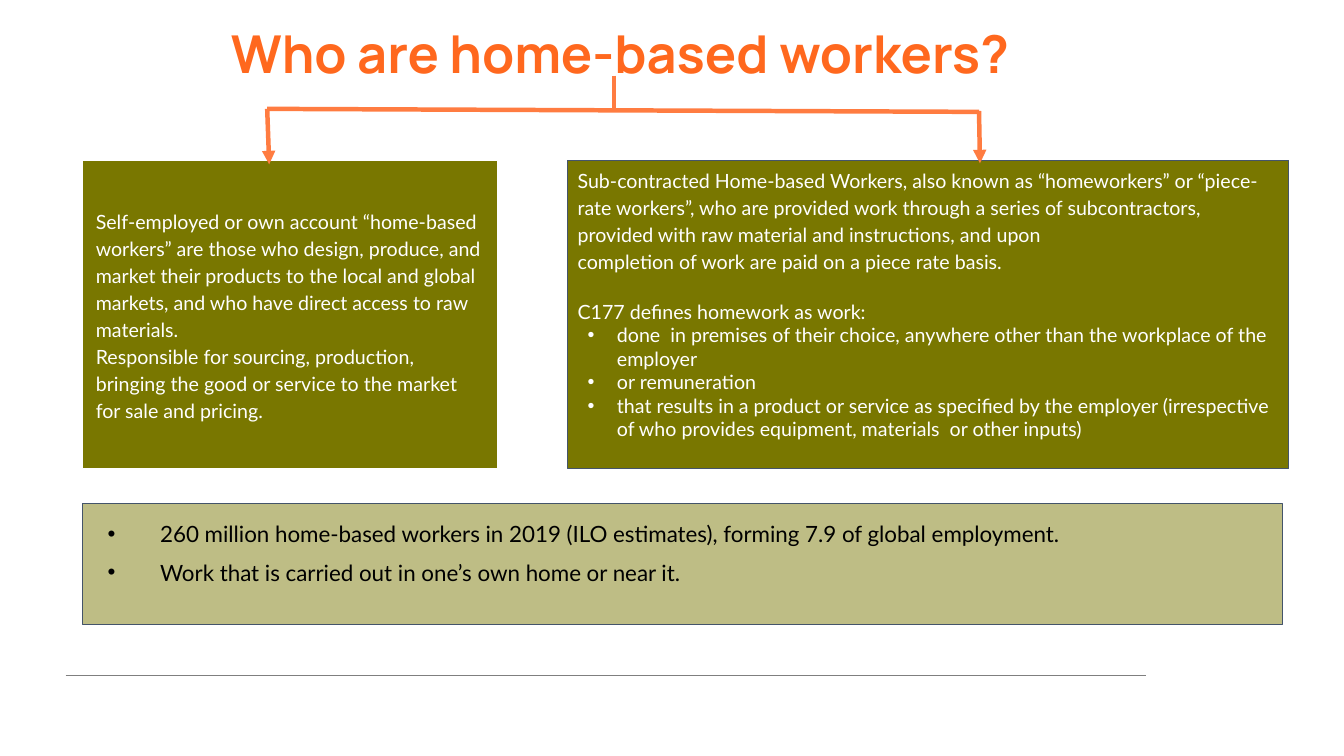
from lxml.etree import SubElement
from pptx import Presentation
from pptx.dml.color import RGBColor
from pptx.enum.shapes import MSO_CONNECTOR as Connector, MSO_SHAPE as Shape
from pptx.enum.text import MSO_ANCHOR as Anchor, PP_ALIGN as Align
from pptx.oxml.ns import qn
from pptx.util import Inches, Pt

WHITE = RGBColor(0xFF, 0xFF, 0xFF)
BLACK = RGBColor(0, 0, 0)
OLIVE = RGBColor(0x79, 0x77, 0x00)
SLATE = RGBColor(0x44, 0x54, 0x6A)
TITLE_ORANGE = RGBColor(0xFF, 0x68, 0x1E)
ARROW_ORANGE = RGBColor(0xFF, 0x7C, 0x41)
GREY = RGBColor(0x7F, 0x7F, 0x7F)

WIDTH, HEIGHT = 13.33, 7.5
LEFT, RIGHT_COLUMN = 0.82, 5.63
CARD_TOP, CARD_HEIGHT = 1.59, 3.06
STEM_X, LEFT_ARROW_X, RIGHT_ARROW_X = 6.09, 2.65, 9.71
STEM_TOP, BAR_Y = 0.75, 1.08

TITLE = "Who are home-based workers?"
SELF_EMPLOYED = [
    "Self-employed or own account “home-based workers” are those who design, produce, and market "
    "their products to the local and global markets, and who have direct access to raw materials.",
    "Responsible for sourcing, production, bringing the good or service to the market for sale and pricing.",
]
SUBCONTRACTED = [
    "Sub-contracted Home-based Workers, also known as “homeworkers” or “piece-rate workers”, who are "
    "provided work through a series of subcontractors, provided with raw material and instructions, and upon",
    "completion of work are paid on a piece rate basis.",
]
DEFINITION = "C177 defines homework as work:"
CRITERIA = [
    "done  in premises of their choice, anywhere other than the workplace of the employer",
    "or remuneration",
    "that results in a product or service as specified by the employer "
    "(irrespective of who provides equipment, materials  or other inputs)",
]
FACTS = [
    "260 million home-based workers in 2019 (ILO estimates), forming 7.9 of global employment.",
    "Work that is carried out in one’s own home or near it.",
]

PROSE = {"spacing": 1.15}
CRITERION = {"indent": (0.39, -0.29)}
FACT = {"indent": (0.67, -0.52), "size": 16, "color": BLACK}
SUBCONTRACTED_LINES = (
    [(text, PROSE) for text in SUBCONTRACTED]
    + [(DEFINITION, {"before": 19})]
    + [(text, CRITERION) for text in CRITERIA]
)
FACT_LINES = [(FACTS[0], FACT), (FACTS[1], {**FACT, "before": 8.5})]

CARDS = [
    (LEFT, CARD_TOP, 4.11, CARD_HEIGHT, WHITE, 100, 0.13, 0.13, [(text, PROSE) for text in SELF_EMPLOYED]),
    (RIGHT_COLUMN, CARD_TOP, 7.15, CARD_HEIGHT, SLATE, 100, 0.1, 0.33, SUBCONTRACTED_LINES),
    (LEFT, 5, 11.9, 1.2, SLATE, 48, 0.1, 0.33, FACT_LINES),
]
LINES = [
    (0.65, 6.7, 11.37, 6.7, GREY, 0.75, False),
    (LEFT_ARROW_X, BAR_Y, RIGHT_ARROW_X, 1.11, ARROW_ORANGE, 3.2, False),
    (LEFT_ARROW_X, BAR_Y, 2.67, 1.63, ARROW_ORANGE, 3.2, True),
    (RIGHT_ARROW_X, 1.1, 9.72, 1.62, ARROW_ORANGE, 3.2, True),
    (STEM_X, STEM_TOP, STEM_X, BAR_Y, ARROW_ORANGE, 3.2, False),
]


def set_insets(frame, left, top, right, bottom):
    frame.margin_left, frame.margin_top = Inches(left), Inches(top)
    frame.margin_right, frame.margin_bottom = Inches(right), Inches(bottom)
    frame.word_wrap = True
    frame.vertical_anchor = Anchor.MIDDLE


def add_bullet(para, margin, indent, color):
    properties = para._p.get_or_add_pPr()
    properties.set("marL", str(Inches(margin)))
    properties.set("indent", str(Inches(indent)))
    tint = SubElement(properties, qn("a:buClr"))
    SubElement(tint, qn("a:srgbClr"), val=str(color))
    SubElement(properties, qn("a:buFont"), typeface="Arial")
    SubElement(properties, qn("a:buChar"), char="•")


def write(para, text, indent=None, spacing=1.0, before=0, size=14, color=WHITE,
          name="Lato", bold=False):
    if indent:
        add_bullet(para, *indent, color)
    para.text = text
    para.alignment = Align.LEFT
    para.line_spacing = spacing
    para.space_before = Pt(before)
    para.font.size, para.font.name, para.font.bold = Pt(size), name, bold
    para.font.color.rgb = color


def add_card(page, left, top, width, height, border, opacity, inset, bottom, lines):
    box = page.shapes.add_shape(Shape.RECTANGLE, *map(Inches, (left, top, width, height)))
    box.shadow.inherit = False
    box.fill.solid()
    box.fill.fore_color.rgb = OLIVE
    if opacity < 100:
        tint = box._element.spPr.find(qn("a:solidFill"))[0]
        SubElement(tint, qn("a:alpha"), val=str(opacity * 1000))
    box.line.color.rgb = border
    box.line.width = Pt(0.75)
    frame = box.text_frame
    set_insets(frame, inset, inset, inset, bottom)
    for index, (text, style) in enumerate(lines):
        para = frame.add_paragraph() if index else frame.paragraphs[0]
        write(para, text, **style)


def add_line(page, x1, y1, x2, y2, color, weight, arrow):
    line = page.shapes.add_connector(Connector.STRAIGHT, *map(Inches, (x1, y1, x2, y2)))
    line.line.color.rgb = color
    line.line.width = Pt(weight)
    if arrow:
        SubElement(line.line._get_or_add_ln(), qn("a:tailEnd"), type="triangle")
    SubElement(line._element.spPr, qn("a:effectLst"))


def main():
    """Build the slide on home-based workers."""
    deck = Presentation()
    deck.slide_width, deck.slide_height = Inches(WIDTH), Inches(HEIGHT)
    page = deck.slides.add_slide(deck.slide_layouts[6])
    title = page.shapes.add_textbox(*map(Inches, (2.29, 0.15, WIDTH - 2.29, 0.83)))
    set_insets(title.text_frame, 0, 0.05, 0, 0.05)
    write(title.text_frame.paragraphs[0], TITLE, spacing=0.9, size=37.3,
          color=TITLE_ORANGE, name="Manrope", bold=True)
    for card in CARDS:
        add_card(page, *card)
    for line in LINES:
        add_line(page, *line)
    deck.save("out.pptx")


if __name__ == "__main__":
    main()
